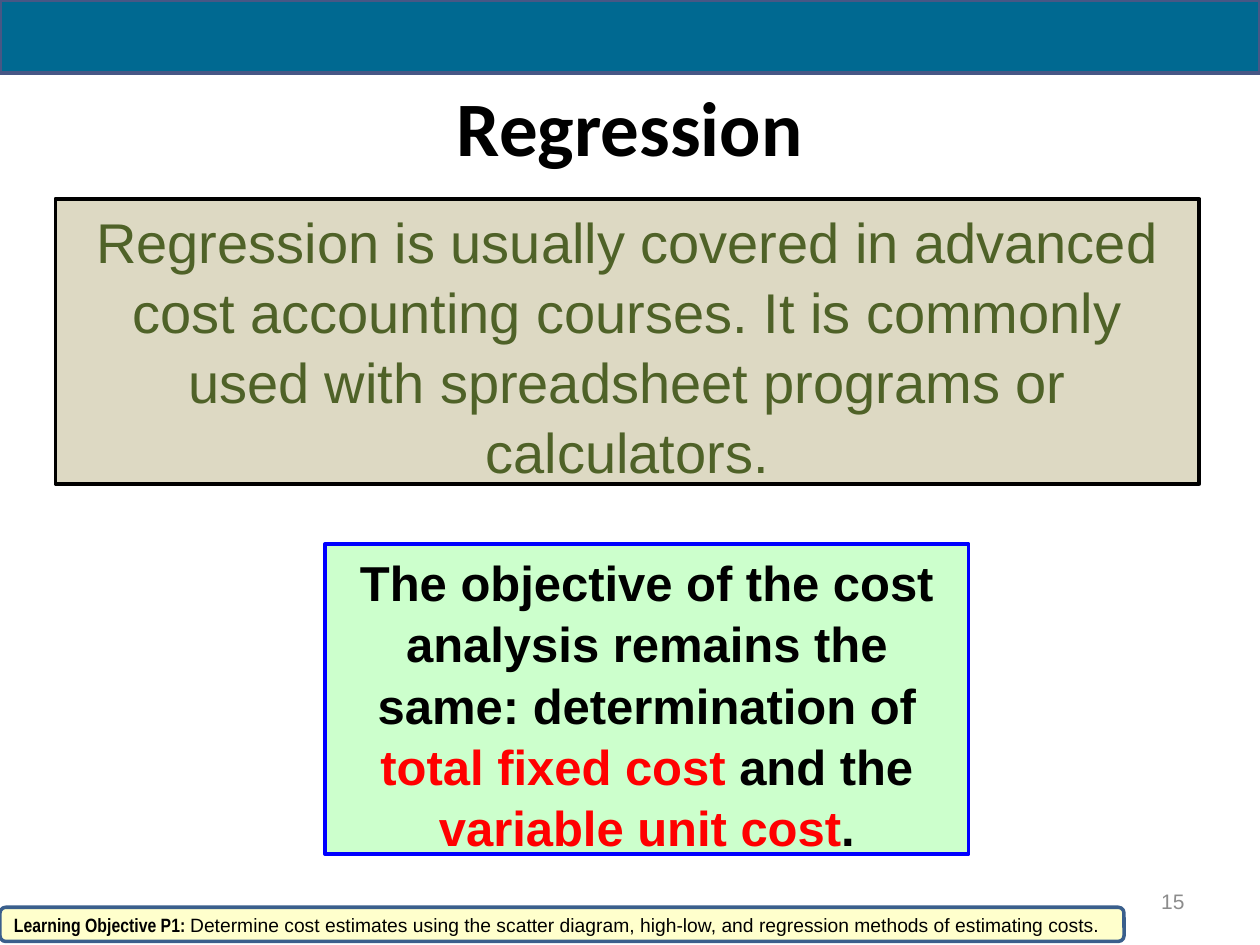
from pptx import Presentation
from pptx.dml.color import RGBColor
from pptx.enum.shapes import MSO_SHAPE as Kind
from pptx.enum.text import MSO_ANCHOR as Anchor, PP_ALIGN as Align
from pptx.util import Cm, Pt


def tint(code):
    return RGBColor.from_string(code)


class Deck:
    font = "Arial"
    black = "000000"
    red = "FF0000"

    def __init__(self):
        self.prs = Presentation()
        self.prs.slide_width = Cm(25.4)
        self.prs.slide_height = Cm(19.05)
        self.slide = self.prs.slides.add_slide(self.prs.slide_layouts[6])

    def box(self, at, fill, line, width, kind=Kind.RECTANGLE):
        shape = self.slide.shapes.add_shape(kind, *map(Cm, at))
        shape.shadow.inherit = False
        shape.fill.solid()
        shape.fill.fore_color.rgb = tint(fill)
        shape.line.color.rgb = tint(line)
        shape.line.width = Pt(width)
        return shape

    def label(self, at, runs, size, align, **style):
        area = self.slide.shapes.add_textbox(*map(Cm, at))
        self.words(area, runs, size, align, Anchor.MIDDLE, **style)

    def words(self, shape, runs, size, align=Align.CENTER,
              anchor=Anchor.TOP, space=None, font=None, bold=False):
        frame = shape.text_frame
        frame.word_wrap = True
        frame.vertical_anchor = anchor
        para = frame.paragraphs[0]
        para.alignment = align
        para.line_spacing = space
        for text, color in runs:
            self.piece(para, text, size, color, font, bold)

    def piece(self, para, text, size, color, font=None, bold=False):
        run = para.add_run()
        run.text = text
        run.font.name = font or self.font
        run.font.size = Pt(size)
        run.font.bold = bold
        run.font.color.rgb = tint(color)


def main():
    deck = Deck()
    black, red = deck.black, deck.red

    # Objective of the analysis
    goal = deck.box((6.55, 10.97, 12.98, 6.25), "CCFFCC", "0000FF", 2)
    deck.words(goal, [
        ("The objective of the cost analysis remains the same: "
         "determination of ", black),
        ("total fixed cost ", red),
        ("and the ", black),
        ("variable unit cost", red),
        (".", black),
    ], 28, space=1.04, bold=True)

    # Title
    deck.label((1.27, 1.47, 22.86, 2.11), [("Regression", black)], 44,
               Align.CENTER, font="Calibri", bold=True)

    # Main statement
    note = deck.box((1.12, 4.01, 23.06, 5.74), "DDD9C3", black, 2.25)
    deck.words(note, [
        ("Regression is usually covered in advanced cost accounting courses. "
         "It is commonly used with spreadsheet programs or calculators.",
         "4F6228"),
    ], 32, space=1.04)

    # Top band
    deck.box((0, 0, 25.4, 1.47), "006991", "475785", 2.25)

    # Slide number
    deck.label((18.21, 17.65, 5.92, 1.02), [("15", "8C8C8C")], 12, Align.RIGHT)

    # Learning objective
    foot = deck.box((0, 18.29, 22.66, 0.69), "FFFFCC", "3A5F8C", 2,
                    Kind.ROUNDED_RECTANGLE)
    deck.words(foot, [("Learning Objective P1: ", black)], 11, Align.LEFT,
               Anchor.MIDDLE, font="Arial Narrow", bold=True)
    deck.piece(foot.text_frame.paragraphs[0],
               "Determine cost estimates using the scatter diagram, high-low, "
               "and regression methods of estimating costs.", 11, black)

    deck.prs.save("out.pptx")


if __name__ == "__main__":
    main()
